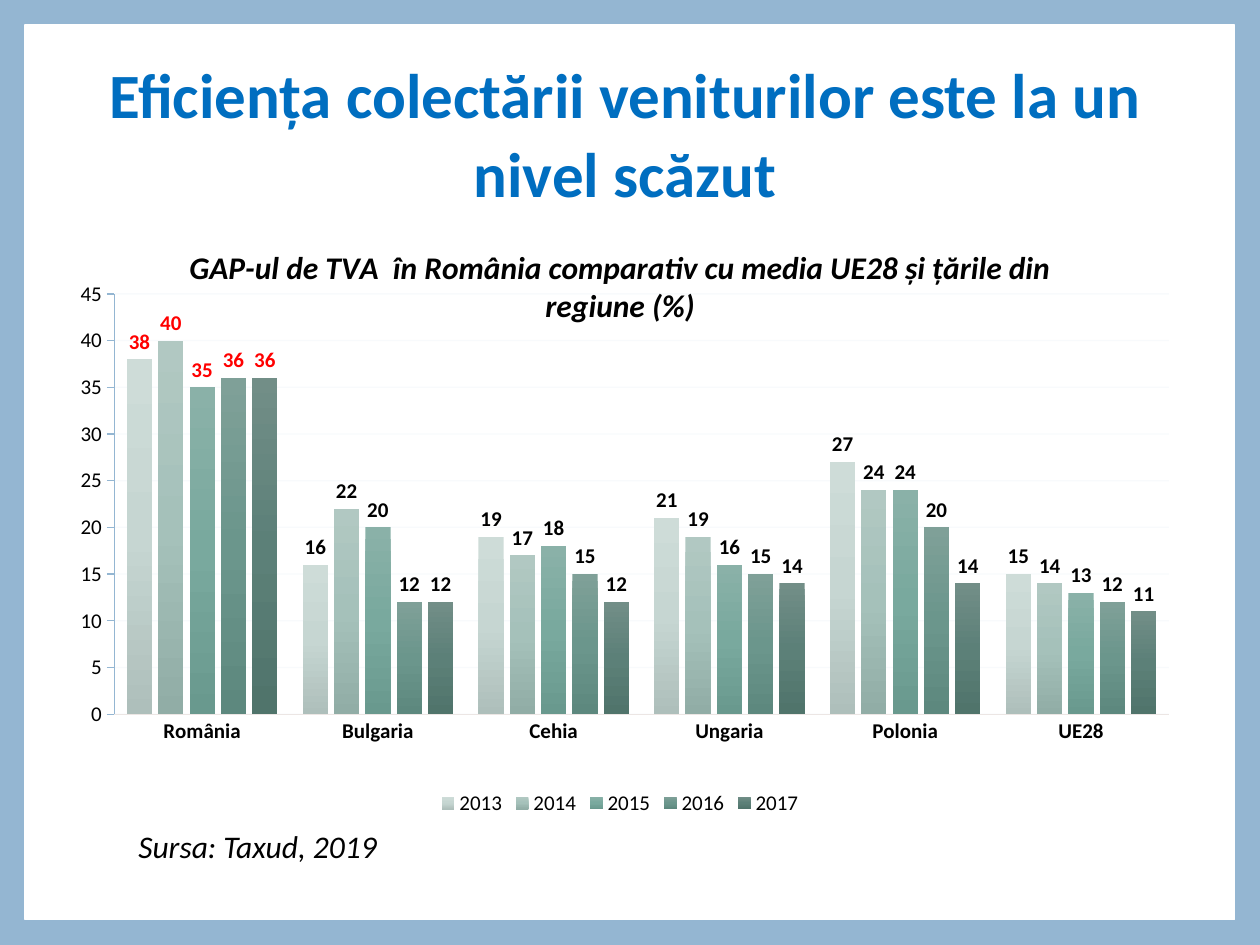
"""Build a slide comparing the VAT gap in Romania with its region and the EU28."""
import pptx
import pptx.chart.data
import pptx.dml.color
import pptx.enum.chart
import pptx.enum.shapes
import pptx.enum.text
import pptx.oxml
import pptx.oxml.ns
import pptx.util
from pptx.util import Cm, Pt

FONT = "Calibri"
BLACK, WHITE, RED, TITLE_BLUE, FRAME_BLUE = "000000", "FFFFFF", "FF0000", "006EC0", "94B6D2"
TITLE = "Eficiența colectării veniturilor este la un nivel scăzut"
SOURCE = "Sursa: Taxud, 2019"
CHART_TITLE = "GAP-ul de TVA  în România comparativ cu media UE28 și țările din regiune (%)"
COUNTRIES = ["România", "Bulgaria", "Cehia", "Ungaria", "Polonia", "UE28"]
YEARS = {
    "2013": ([38, 16, 19, 21, 27, 15], ["CEDCD8", "C6D6D2", "AEBFBB"]),
    "2014": ([40, 22, 17, 19, 24, 14], ["B1C8C2", "A5C1BA", "91ADA6"]),
    "2015": ([35, 20, 18, 16, 24, 13], ["8AB1A8", "79A99E", "69998E"]),
    "2016": ([36, 12, 15, 15, 20, 12], ["7FA098", "6B968C", "5D887E"]),
    "2017": ([36, 12, 12, 14, 14, 11], ["728E87", "5C8078", "50746B"]),
}
PLOT_AREA = {"x": 0.054, "y": 0.122, "w": 0.93, "h": 0.701}
SLIDE_WIDTH, SLIDE_HEIGHT, BORDER = 25.4, 19.05, 0.51


def rgb(value):
    """Return the colour for a hex string."""
    return pptx.dml.color.RGBColor.from_string(value)


def style_font(font, size, color=BLACK, bold=False, italic=False):
    """Apply the slide's typeface with a size, colour and style."""
    font.name, font.size, font.bold, font.italic = FONT, Pt(size), bold, italic
    font.color.rgb = rgb(color)


def style_line(line, color):
    """Draw a thin solid line."""
    line.width = Pt(0.75)
    line.color.rgb = rgb(color)


def add_text(slide, box, text, **style):
    """Add a wrapping text box and return it."""
    shape = slide.shapes.add_textbox(*map(Cm, box))
    shape.text_frame.word_wrap = True
    shape.text_frame.text = text
    style_font(shape.text_frame.paragraphs[0].runs[0].font, **style)
    return shape


def fill_gradient(series, colors):
    """Fill a series from top to bottom with evenly spaced colours."""
    step = 100000 // (len(colors) - 1)
    stops = "".join(
        f'<a:gs pos="{index * step}"><a:srgbClr val="{color}"/></a:gs>'
        for index, color in enumerate(colors)
    )
    gradient = pptx.oxml.parse_xml(
        f'<a:gradFill {pptx.oxml.ns.nsdecls("a")} rotWithShape="1"><a:gsLst>{stops}</a:gsLst>'
        '<a:lin ang="5400000" scaled="0"/></a:gradFill>'
    )
    series._element.get_or_add_spPr().insert(0, gradient)


def place_plot(chart):
    """Fix the inner plot area as fractions of the chart."""
    modes = "".join(f'<c:{side}Mode val="edge"/>' for side in "xy")
    sizes = "".join(f'<c:{side} val="{value}"/>' for side, value in PLOT_AREA.items())
    layout = pptx.oxml.parse_xml(
        f'<c:layout {pptx.oxml.ns.nsdecls("c")}><c:manualLayout>'
        f'<c:layoutTarget val="inner"/>{modes}{sizes}</c:manualLayout></c:layout>'
    )
    plot_area = chart._chartSpace.chart.plotArea
    for existing in plot_area.xpath("./c:layout"):
        plot_area.remove(existing)
    plot_area.insert(0, layout)


def style_axes(chart):
    """Format both axes and the faint gridlines."""
    marks = pptx.enum.chart.XL_TICK_MARK
    category_axis, value_axis = chart.category_axis, chart.value_axis
    category_axis.major_tick_mark = marks.NONE
    style_font(category_axis.tick_labels.font, 12, bold=True)
    style_line(category_axis.format.line, "ECE6E4")
    value_axis.minimum_scale, value_axis.maximum_scale, value_axis.major_unit = 0, 45, 5
    value_axis.major_tick_mark = marks.OUTSIDE
    style_font(value_axis.tick_labels.font, 12)
    style_line(value_axis.format.line, FRAME_BLUE)
    style_line(value_axis.major_gridlines.format.line, FRAME_BLUE)
    for color in chart._chartSpace.xpath(".//c:majorGridlines//a:srgbClr"):
        color.append(pptx.oxml.parse_xml(f'<a:alpha {pptx.oxml.ns.nsdecls("a")} val="5000"/>'))


def style_series(series, colors):
    """Colour a series and label its bars, Romania's in red."""
    outside = pptx.enum.chart.XL_LABEL_POSITION.OUTSIDE_END
    fill_gradient(series, colors)
    labels = series.data_labels
    labels.show_value = True
    romania_label = series.points[0].data_label
    for label, color in ((labels, BLACK), (romania_label, RED)):
        style_font(label.font, 12, color, bold=True)
        label.position = outside


def add_gap_chart(slide, box):
    """Add the clustered column chart."""
    data = pptx.chart.data.CategoryChartData()
    data.categories = COUNTRIES
    for year, (values, _) in YEARS.items():
        data.add_series(year, values)
    chart = slide.shapes.add_chart(
        pptx.enum.chart.XL_CHART_TYPE.COLUMN_CLUSTERED, *map(Cm, box), data
    ).chart
    style_font(chart.font, 10)
    chart.has_title = True
    chart.chart_title.text_frame.text = CHART_TITLE
    title_run = chart.chart_title.text_frame.paragraphs[0].runs[0]
    style_font(title_run.font, 18, bold=True, italic=True)
    chart.has_legend = True
    chart.legend.position = pptx.enum.chart.XL_LEGEND_POSITION.BOTTOM
    chart.legend.include_in_layout = False
    style_font(chart.legend.font, 12)
    plot = chart.plots[0]
    plot.gap_width, plot.overlap, plot.vary_by_categories = 100, -24, False
    for series in plot.series:
        style_series(series, YEARS[series.name][1])
    style_axes(chart)
    place_plot(chart)


def main():
    """Assemble and save the slide."""
    presentation = pptx.Presentation()
    presentation.slide_width, presentation.slide_height = Cm(SLIDE_WIDTH), Cm(SLIDE_HEIGHT)
    slide = presentation.slides.add_slide(presentation.slide_layouts[6])
    slide.background.fill.solid()
    slide.background.fill.fore_color.rgb = rgb(FRAME_BLUE)

    panel = slide.shapes.add_shape(
        pptx.enum.shapes.MSO_SHAPE.RECTANGLE, Cm(BORDER), Cm(BORDER),
        Cm(SLIDE_WIDTH - 2 * BORDER), Cm(SLIDE_HEIGHT - 2 * BORDER),
    )
    panel.shadow.inherit = False
    panel.fill.solid()
    panel.fill.fore_color.rgb = rgb(WHITE)
    panel.line.color.rgb = rgb(WHITE)
    panel.line.width = Pt(1)

    title = add_text(slide, (1.07, 0.84, 23.06, 3.61), TITLE, size=36, color=TITLE_BLUE, bold=True)
    title.text_frame.vertical_anchor = pptx.enum.text.MSO_ANCHOR.MIDDLE
    title.text_frame.paragraphs[0].alignment = pptx.enum.text.PP_ALIGN.CENTER
    title.text_frame.paragraphs[0].line_spacing = 1.05
    add_text(slide, (2.54, 16.54, 6.55, 1.02), SOURCE, size=18, italic=True)
    add_gap_chart(slide, (1.07, 4.45, 22.86, 12.09))
    presentation.save("out.pptx")


if __name__ == "__main__":
    main()
